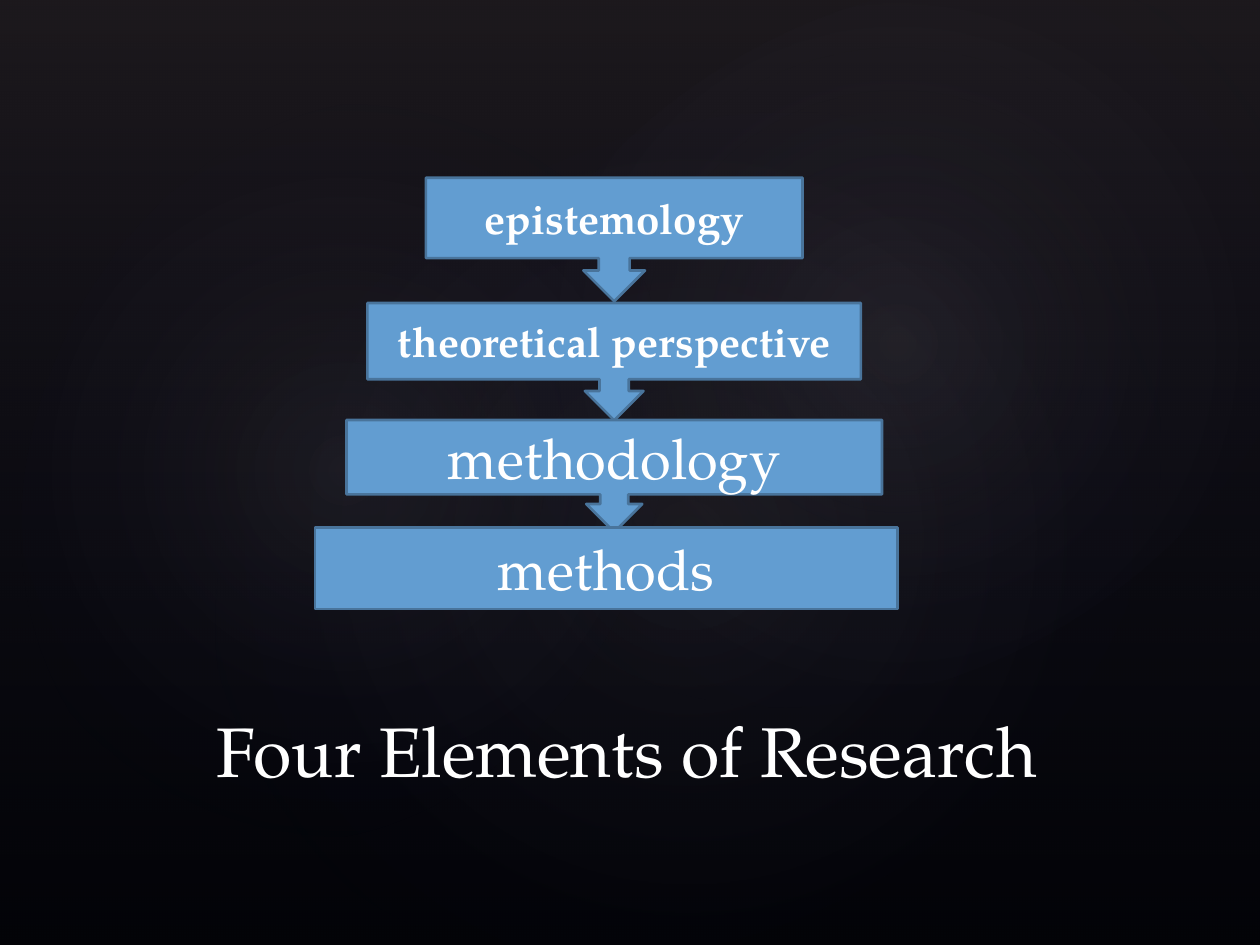
from dataclasses import dataclass

from lxml import etree
from pptx import Presentation
from pptx.dml.color import RGBColor
from pptx.enum.shapes import MSO_SHAPE
from pptx.enum.text import MSO_ANCHOR, PP_ALIGN
from pptx.oxml.ns import qn
from pptx.shapes.autoshape import Shape
from pptx.slide import Slide
from pptx.text.text import TextFrame
from pptx.util import Pt

RECT = MSO_SHAPE.RECTANGLE
OVAL = MSO_SHAPE.OVAL
CALLOUT = MSO_SHAPE.DOWN_ARROW_CALLOUT
PROCESS = MSO_SHAPE.FLOWCHART_PROCESS
CENTER = PP_ALIGN.CENTER
MIDDLE = MSO_ANCHOR.MIDDLE
BOTTOM = MSO_ANCHOR.BOTTOM

BLACK = RGBColor(0x00, 0x00, 0x00)
WHITE = RGBColor(0xFF, 0xFF, 0xFF)
BLUE = RGBColor(0x62, 0x9D, 0xD1)
EDGE = RGBColor(0x49, 0x74, 0x9B)
PLUM = RGBColor(0x50, 0x46, 0x52)
NAVY = RGBColor(0x24, 0x28, 0x52)
MIST = RGBColor(0xC4, 0xBC, 0xC6)
FONT = "TeX Gyre Pagella"
WIDTH, HEIGHT = 720, 540


@dataclass
class Stop:
    place: int
    color: RGBColor
    alpha: int


@dataclass
class Glow:
    left: float
    top: float
    width: float
    height: float
    turn: float
    alpha: int


@dataclass
class Step:
    text: str
    left: float
    top: float
    width: float
    height: float
    size: int
    bold: bool = False
    kind: MSO_SHAPE = CALLOUT
    body: float = 0.65


GLOWS = [
    Glow(108, 82, 570, 449, 328.7, 7),
    Glow(-21.6, 92, 436, 353, 294.3, 8),
    Glow(257.8, 9.4, 510.5, 374.4, 328.7, 8),
]
STEPS = [
    Step("epistemology", 243.4, 101.6, 215.2, 70.6, 24, True),
    Step("theoretical perspective", 210, 173.2, 282, 67, 24, True),
    Step("methodology", 198, 240, 306, 64, 32, body=0.665),
    Step("methods", 180, 301.4, 333, 46.6, 32, kind=PROCESS),
]


def shade(shape: Shape, stops: list[Stop], round_fill: bool) -> None:
    shape.line.fill.background()
    shape.shadow.inherit = False
    shape.fill.background()
    grad = etree.Element(qn("a:gradFill"), rotWithShape="1")
    row = etree.SubElement(grad, qn("a:gsLst"))
    for stop in stops:
        mark = etree.SubElement(row, qn("a:gs"), pos=str(stop.place * 1000))
        tint = etree.SubElement(mark, qn("a:srgbClr"), val=str(stop.color))
        etree.SubElement(tint, qn("a:alpha"), val=str(stop.alpha * 1000))
    if round_fill:
        way = etree.SubElement(grad, qn("a:path"))
        way.set("path", "circle")
        sides = dict.fromkeys("ltrb", "50000")
        etree.SubElement(way, qn("a:fillToRect"), sides)
    else:
        etree.SubElement(grad, qn("a:lin"), ang="5400000", scaled="0")
    props = shape.element.spPr
    props.replace(props.find(qn("a:noFill")), grad)


def write(frame: TextFrame, text: str, size: int, bold: bool = False) -> None:
    frame.word_wrap = True
    para = frame.paragraphs[0]
    para.alignment = CENTER
    run = para.add_run()
    run.text = text
    run.font.name = FONT
    run.font.size = Pt(size)
    run.font.bold = bold
    run.font.color.rgb = WHITE


def draw_back(slide: Slide) -> None:
    slide.background.fill.solid()
    slide.background.fill.fore_color.rgb = BLACK
    veil = slide.shapes.add_shape(RECT, 0, 0, Pt(WIDTH), Pt(HEIGHT))
    shade(veil, [Stop(0, PLUM, 36), Stop(100, NAVY, 10)], False)
    for glow in GLOWS:
        oval = slide.shapes.add_shape(
            OVAL, Pt(glow.left), Pt(glow.top), Pt(glow.width), Pt(glow.height)
        )
        oval.rotation = glow.turn
        shade(oval, [Stop(0, MIST, glow.alpha), Stop(58, NAVY, 0)], True)


def draw_title(slide: Slide) -> None:
    title = slide.shapes.title
    title.left, title.top = Pt(61.2), Pt(383.8)
    title.width, title.height = Pt(594), Pt(72)
    title.text_frame.vertical_anchor = BOTTOM
    write(title.text_frame, "Four Elements of Research", 40)
    title.element.getparent().append(title.element)


def draw_step(slide: Slide, step: Step) -> None:
    box = slide.shapes.add_shape(
        step.kind, Pt(step.left), Pt(step.top), Pt(step.width), Pt(step.height)
    )
    if step.kind == CALLOUT:
        box.adjustments[3] = step.body
    box.shadow.inherit = False
    box.fill.solid()
    box.fill.fore_color.rgb = BLUE
    box.line.color.rgb = EDGE
    box.line.width = Pt(1.5)
    box.text_frame.vertical_anchor = MIDDLE
    write(box.text_frame, step.text, step.size, step.bold)


def main() -> None:
    deck = Presentation()
    deck.slide_width, deck.slide_height = Pt(WIDTH), Pt(HEIGHT)
    slide = deck.slides.add_slide(deck.slide_layouts[5])
    draw_back(slide)
    draw_title(slide)
    for step in STEPS:
        draw_step(slide, step)
    deck.save("out.pptx")


if __name__ == "__main__":
    main()
